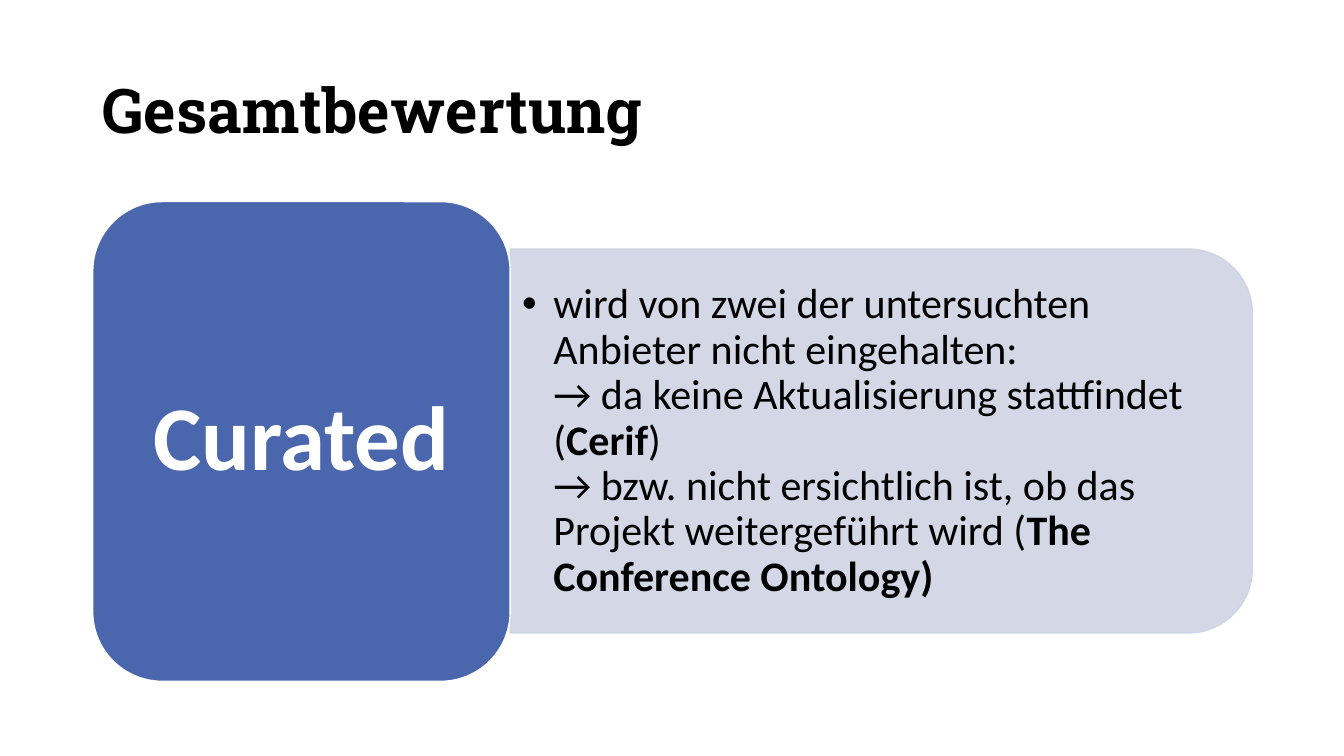
from lxml import etree
from pptx import Presentation
from pptx.dml.color import RGBColor
from pptx.enum import shapes, text
from pptx.oxml.ns import qn
from pptx.util import Inches, Pt

BLACK = RGBColor(0, 0, 0)
WHITE = RGBColor(255, 255, 255)
BLUE = RGBColor(0x4A, 0x66, 0xAC)
PALE = RGBColor(0xD0, 0xD3, 0xE3)

HEAD = {"name": "Roboto Slab", "size": Pt(44), "bold": True}
LABEL = {"name": "Calibri", "size": Pt(65), "bold": True}
BODY = {"name": "Calibri", "size": Pt(30)}

LINES = [
    [("wird von zwei der untersuchten Anbieter nicht eingehalten:", False)],
    [("→ da keine Aktualisierung stattfindet (", False), ("Cerif", True), (") ", False)],
    [("→ bzw. nicht ersichtlich ist, ob das Projekt weitergeführt wird (", False),
     ("The Conference Ontology)", True)],
]


def style(item, form):
    for key, val in form.items():
        setattr(item, key, val)


def write(para, words, form, color):
    run = para.add_run()
    run.text = words
    style(run.font, form)
    run.font.color.rgb = color


def setup(frame, side, edge):
    style(frame, {
        "word_wrap": True,
        "vertical_anchor": text.MSO_ANCHOR.MIDDLE,
        "margin_left": Inches(side), "margin_right": Inches(side),
        "margin_top": Inches(edge), "margin_bottom": Inches(edge),
    })
    para = frame.paragraphs[0]
    para.line_spacing = 0.9
    return para


def add_box(slide, box, side, edge):
    area = slide.shapes.add_textbox(*map(Inches, box))
    return setup(area.text_frame, side, edge)


def add_form(slide, kind, box, fill, line):
    form = slide.shapes.add_shape(kind, *map(Inches, box))
    form.shadow.inherit = False
    form.fill.solid()
    form.fill.fore_color.rgb = fill
    form.line.color.rgb = line
    form.line.width = Pt(1)
    return form


def add_title(slide, box):
    write(add_box(slide, box, 0.1, 0.05), "Gesamtbewertung", HEAD, BLACK)


def add_panel(slide, box):
    left, top, wide, high = box
    turned = (left + (wide - high) / 2, top + (high - wide) / 2, high, wide)
    panel = add_form(slide, shapes.MSO_SHAPE.ROUND_2_SAME_RECTANGLE, turned, PALE, PALE)
    panel.rotation = 90
    for tint in panel._element.spPr.iter(qn("a:srgbClr")):
        etree.SubElement(tint, qn("a:alpha"), val="90000")

    para = add_box(slide, (left, top + 0.19, wide - 0.19, high - 0.37), 0.12, 0.06)
    props = para._p.get_or_add_pPr()
    props.set("marL", str(Inches(0.31)))
    props.set("indent", str(Inches(-0.31)))
    etree.SubElement(props, qn("a:buFont"), typeface="Arial")
    etree.SubElement(props, qn("a:buChar"), char="•")
    for row, line in enumerate(LINES):
        if row:
            para.add_line_break()
        for words, bold in line:
            write(para, words, {**BODY, "bold": bold}, BLACK)
    for gap in para._p.findall(qn("a:br")):
        etree.SubElement(gap, qn("a:rPr"), sz="3000")


def add_label(slide, box):
    card = add_form(slide, shapes.MSO_SHAPE.ROUNDED_RECTANGLE, box, BLUE, WHITE)
    para = setup(card.text_frame, 0.27, 0.14)
    para.alignment = text.PP_ALIGN.CENTER
    write(para, "Curated", LABEL, WHITE)


def main():
    deck = Presentation()
    deck.slide_width, deck.slide_height = Inches(13.33), Inches(7.5)
    slide = deck.slides.add_slide(deck.slide_layouts[6])
    add_title(slide, (0.92, 0.4, 11.5, 1.45))
    add_panel(slide, (5.06, 2.47, 7.36, 3.81))
    add_label(slide, (0.92, 2, 4.14, 4.76))
    deck.save("out.pptx")


if __name__ == "__main__":
    main()
